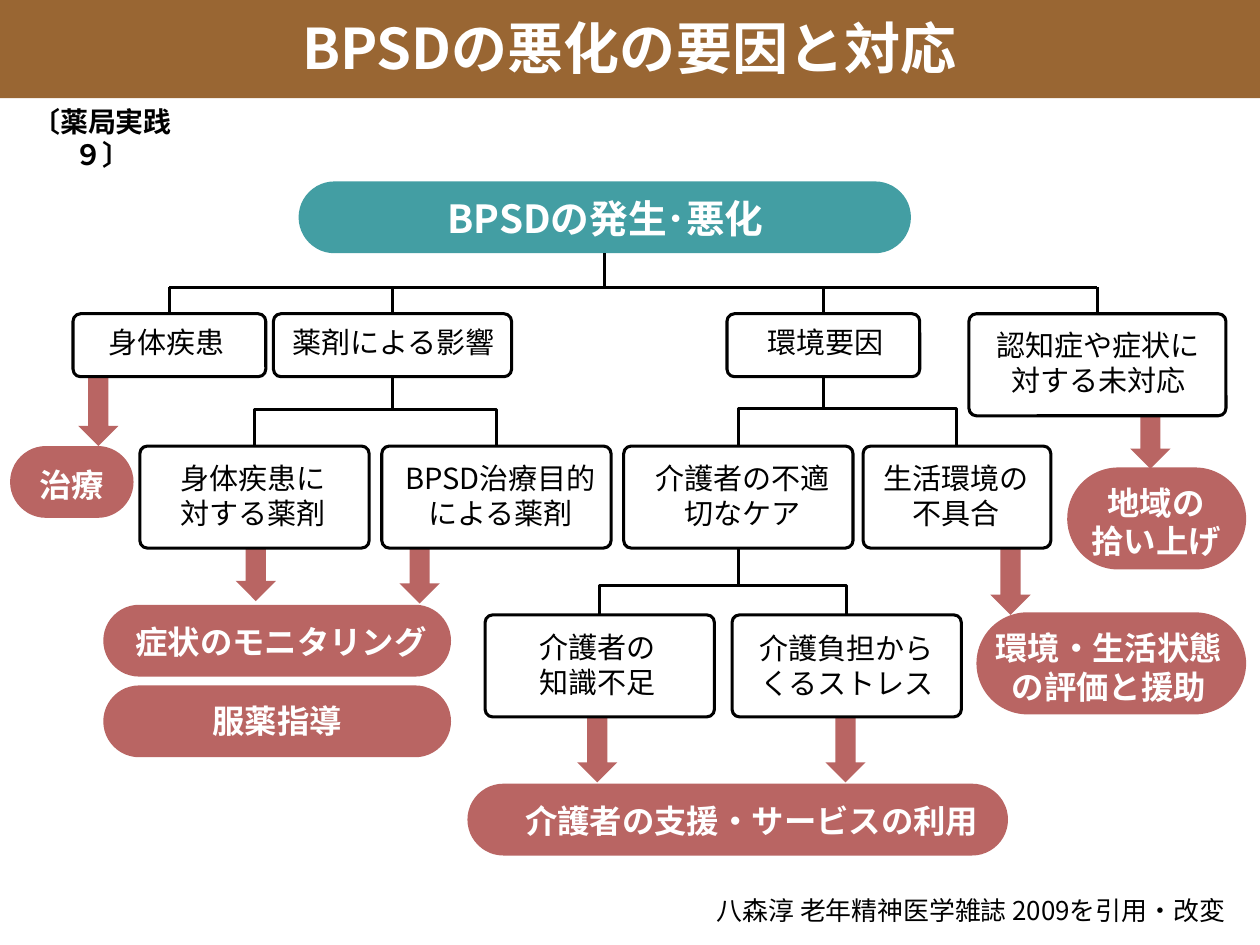
from lxml.etree import SubElement
from pptx import Presentation
from pptx.dml.color import RGBColor
from pptx.enum.shapes import MSO_CONNECTOR as Link, MSO_SHAPE as Kind
from pptx.enum.text import MSO_ANCHOR as Anchor, PP_ALIGN as Align
from pptx.oxml.ns import qn
from pptx.util import Inches, Pt

BLACK = RGBColor(0x00, 0x00, 0x00)
WHITE = RGBColor(0xFF, 0xFF, 0xFF)
BROWN = RGBColor(0x99, 0x66, 0x33)
TEAL = RGBColor(0x43, 0x9E, 0xA3)
RED = RGBColor(0xB9, 0x65, 0x63)
TOP, BOTTOM = 0, 2


class Chart:
    font = "Noto Sans CJK JP"
    line = Pt(1.75)
    radius = 0.06

    def __init__(self, slide):
        self.slide = slide
        self.shapes = slide.shapes

    def shape(self, kind, x, y, w, h, fill, edge=None):
        item = self.shapes.add_shape(kind, *map(Inches, (x, y, w, h)))
        item.shadow.inherit = False
        item.fill.solid()
        item.fill.fore_color.rgb = fill
        if edge is None:
            item.line.fill.background()
        else:
            self.ink(item, edge)
        return item

    def ink(self, item, color=BLACK):
        item.line.color.rgb = color
        item.line.width = self.line

    def arrow(self, x, y):
        return self.shape(Kind.DOWN_ARROW, x, y, 0.32, 0.58, RED)

    def pill(self, x, y, w, h=0.57, fill=RED):
        item = self.shape(Kind.ROUNDED_RECTANGLE, x, y, w, h, fill)
        item.adjustments[0] = 0.5
        return item

    def box(self, x, y, w, h=0.81):
        item = self.shape(Kind.ROUNDED_RECTANGLE, x, y, w, h, WHITE, BLACK)
        item.adjustments[0] = self.radius / h
        return item

    def wire(self, x1, y1, x2, y2):
        item = self.shapes.add_connector(Link.STRAIGHT, x1, y1, x2, y2)
        self.ink(item)
        SubElement(item._element.spPr, qn("a:effectLst"))
        return item

    def drop(self, y, box):
        """Join a height to the top of a box."""
        x = mid(box)
        self.wire(x, y, x, box.top).end_connect(box, TOP)

    def stem(self, box, y):
        """Join the foot of a box to a height."""
        x = mid(box)
        self.wire(x, box.top + box.height, x, y).begin_connect(box, BOTTOM)

    def fork(self, parent, y, left, right):
        """Branch from a parent box to two child boxes."""
        y = Inches(y)
        self.stem(parent, y)
        path = self.shapes.build_freeform(mid(left), left.top)
        path.add_line_segments([(mid(left), y), (mid(right), y),
                                (mid(right), right.top)], close=False)
        item = path.convert_to_shape()
        item.shadow.inherit = False
        item.fill.background()
        self.ink(item)

    def text(self, words, x, y, w, h, size=16.6, color=BLACK, bold=False,
             align=Align.CENTER, anchor=Anchor.BOTTOM, pitch=None, wrap=True,
             gap=0.2):
        frame = self.shapes.add_textbox(*map(Inches, (x, y, w, h))).text_frame
        frame.word_wrap = wrap
        frame.vertical_anchor = anchor
        frame.text = words
        for para in frame.paragraphs:
            para.alignment = align
            para.line_spacing = pitch
            para.space_before = Pt(round(size * gap, 1))
            font = para.font
            font.size, font.bold, font.name = Pt(size), bold, self.font
            font.color.rgb = color
            props = para._p.pPr.find(qn("a:defRPr"))
            SubElement(props, qn("a:ea")).set("typeface", self.font)


def mid(item):
    return item.left + item.width // 2


def build():
    deck = Presentation()
    deck.slide_width, deck.slide_height = Inches(10), Inches(7.5)
    chart = Chart(deck.slides.add_slide(deck.slide_layouts[6]))

    # Arrows, partly behind the boxes
    for spot in [(3.17, 4.21), (0.62, 2.96), (1.87, 4.19), (4.58, 5.63),
                 (7.86, 4.3), (8.97, 3.14), (6.55, 5.63)]:
        chart.arrow(*spot)

    # Root and cause boxes
    root = chart.pill(2.37, 1.44, 4.86, fill=TEAL)
    row = 2.49
    body = chart.box(0.58, row, 1.53, 0.5)
    drug = chart.box(2.17, row, 1.89, 0.5)
    place = chart.box(5.77, row, 1.53, 0.5)
    unmet = chart.box(7.69, row, 2.04)
    row = 3.54
    cure, calm, care = [chart.box(1.11 + 1.92 * i, row, 1.82)
                        for i in range(3)]
    home = chart.box(6.85, row, 1.49)
    skill, stress = [chart.box(x, 4.88, 1.82) for x in (3.85, 5.81)]

    # Tree lines
    bar = Inches(2.28)
    chart.stem(root, bar)
    chart.wire(mid(body), bar, mid(unmet), bar)
    for cause in (body, drug, place, unmet):
        chart.drop(bar, cause)
    chart.fork(drug, 3.25, cure, calm)
    chart.fork(place, 3.24, care, home)
    chart.fork(care, 4.65, skill, stress)

    # Response pills
    for spot in [(0.08, 3.54, 0.98), (0.82, 4.8, 2.76), (0.82, 5.44, 2.76),
                 (8.47, 3.71, 1.42, 0.81), (7.75, 4.86, 2.14, 0.81),
                 (3.71, 6.22, 4.29)]:
        chart.pill(*spot)

    # Cause labels
    chart.text("BPSDの発生･悪化", 2.27, 1.56, 5.07, 0.4, 22.1, WHITE, True,
               pitch=0.8)
    for words, x, w in [("身体疾患", 0.6, 1.44),
                        ("薬剤による影響", 2.08, 2.08),
                        ("環境要因", 5.87, 1.36)]:
        chart.text(words, x, 2.58, w, 0.32, pitch=0.8)
    for words, x, y, w in [
            ("認知症や症状に対する未対応", 7.7, 2.54, 2.03),
            ("BPSD治療目的による薬剤", 3.09, 3.6, 1.76),
            ("介護者の不適切なケア", 5.08, 3.6, 1.63),
            ("生活環境の不具合", 6.87, 3.6, 1.44),
            ("介護負担からくるストレス", 5.88, 4.95, 1.68)]:
        chart.text(words, x, y, w, 0.66)
    for words, x, y, w in [("身体疾患に\n対する薬剤", 1.1, 3.6, 1.81),
                           ("介護者の\n知識不足", 3.89, 4.94, 1.71)]:
        chart.text(words, x, y, w, 0.66, gap=0)

    # Response labels
    for words, x, y, w, h, pitch in [
            ("症状のモニタリング", 0.79, 4.94, 2.88, 0.35, 0.8),
            ("服薬指導", 0.76, 5.57, 2.88, 0.35, 0.8),
            ("地域の\n拾い上げ", 8.53, 3.81, 1.29, 0.68, 0.8),
            ("環境・生活状態の評価と援助", 7.72, 4.93, 2.16, 0.72, None),
            ("治療", 0.13, 3.7, 0.88, 0.35, 0.8),
            ("介護者の支援・サービスの利用", 3.89, 6.36, 4.15, 0.35, 0.8)]:
        chart.text(words, x, y, w, h, 18.5, WHITE, True, pitch=pitch)

    # Title, tag and credit
    chart.shape(Kind.RECTANGLE, 0, 0, 10, 0.78, BROWN)
    chart.text("BPSDの悪化の要因と対応", 0.51, 0.06, 8.97, 0.66, 32, WHITE,
               True, anchor=Anchor.TOP, gap=0)
    chart.text("〔薬局実践９〕", 0, 0.78, 1.62, 0.37, 16, bold=True,
               anchor=Anchor.TOP, gap=0)
    chart.text("八森淳 老年精神医学雑誌 2009を引用・改変", 5.44, 7.1, 4.38, 0.3,
               14.8, align=Align.RIGHT, anchor=Anchor.TOP, pitch=0.8,
               wrap=False)

    deck.save("out.pptx")


if __name__ == "__main__":
    build()
